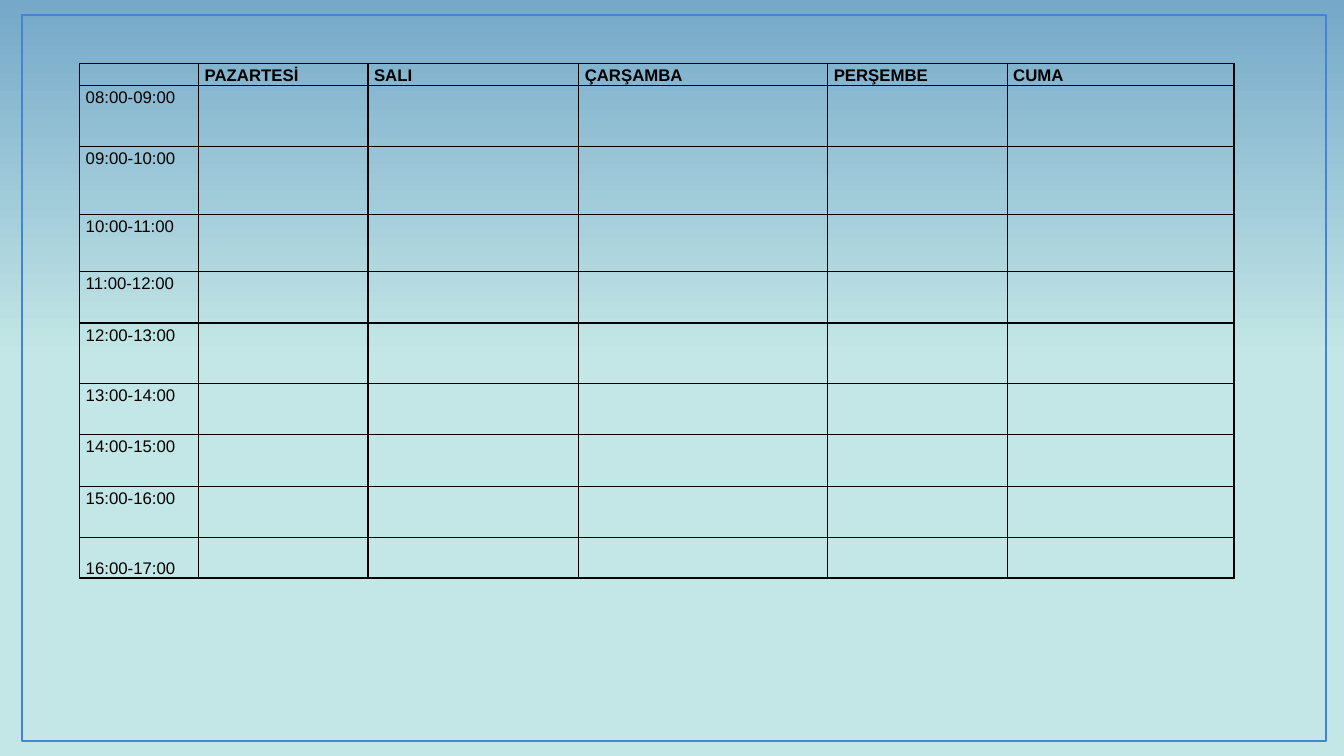
from dataclasses import dataclass

from lxml.etree import SubElement
from pptx import Presentation
from pptx.dml.color import RGBColor
from pptx.enum.shapes import MSO_SHAPE
from pptx.enum.text import MSO_ANCHOR
from pptx.oxml.ns import qn
from pptx.slide import Slide
from pptx.table import _Cell
from pptx.util import Inches, Pt

COLORS = {"pale": "C3E7E6", "sky": "75A8C9", "frame": "4584D3", "ink": "000000"}
DAYS = ["PAZARTESİ", "SALI", "ÇARŞAMBA", "PERŞEMBE", "CUMA"]
WIDTHS = [1.18, 1.68, 2.09, 2.47, 1.78, 2.25]
HEAD = 0.2


@dataclass
class Slot:
    start: int
    height: float

    @property
    def label(self) -> str:
        return f"{self.start:02}:00-{self.start + 1:02}:00"


HEIGHTS = [0.61, 0.67, 0.57, 0.51, 0.6, 0.51, 0.51, 0.51, 0.4]
SLOTS = [Slot(hour, height) for hour, height in enumerate(HEIGHTS, 8)]


def color(name: str) -> RGBColor:
    return RGBColor.from_string(COLORS[name])


def paint(slide: Slide) -> None:
    """Fill the background with a gradient that starts at the bottom."""
    fill = slide.background.fill
    fill.gradient()
    fill.gradient_angle = 90
    for stop, (place, name) in zip(fill.gradient_stops, [(0.53, "pale"), (1, "sky")]):
        stop.position = place
        stop.color.rgb = color(name)


def add_frame(slide: Slide) -> None:
    frame = slide.shapes.add_shape(
        MSO_SHAPE.RECTANGLE, Inches(0.22), Inches(0.15), Inches(12.93), Inches(7.2)
    )
    frame.shadow.inherit = False
    frame.fill.background()
    frame.line.color.rgb = color("frame")
    frame.line.width = Pt(1.5)


def add_edges(cell: _Cell) -> None:
    props = cell._tc.get_or_add_tcPr()
    for spot, side in enumerate(["lnL", "lnR", "lnT", "lnB"]):
        line = SubElement(props, qn(f"a:{side}"), w=str(Pt(1)))
        solid = SubElement(line, qn("a:solidFill"))
        SubElement(solid, qn("a:srgbClr"), val=COLORS["ink"])
        props.insert(spot, line)


def fill_cell(cell: _Cell, text: str, bold: bool) -> None:
    cell.margin_left = cell.margin_right = Inches(0.06)
    cell.margin_top = cell.margin_bottom = 0
    cell.fill.background()
    add_edges(cell)
    cell.text = text
    para = cell.text_frame.paragraphs[0]
    para.line_spacing = 1.15
    para.font.name = "Arial"
    para.font.size = Pt(12)
    para.font.bold = bold
    para.font.color.rgb = color("ink")
    if not text:
        SubElement(para._p, qn("a:endParaRPr"), sz="1200")


def add_plan(slide: Slide) -> None:
    rows = [["", *DAYS]] + [[slot.label] + [""] * len(DAYS) for slot in SLOTS]
    sizes = [HEAD, *HEIGHTS]
    table = slide.shapes.add_table(
        len(rows), len(WIDTHS), Inches(0.79), Inches(0.63),
        Inches(sum(WIDTHS)), Inches(sum(sizes)),
    ).table
    table.first_row = table.horz_banding = False
    for column, width in zip(table.columns, WIDTHS):
        column.width = Inches(width)
    for top, (texts, height) in enumerate(zip(rows, sizes)):
        table.rows[top].height = Inches(height)
        for left, text in enumerate(texts):
            fill_cell(table.cell(top, left), text, bold=top == 0)
    table.cell(len(SLOTS), 0).vertical_anchor = MSO_ANCHOR.BOTTOM


def main() -> None:
    deck = Presentation()
    deck.slide_width, deck.slide_height = Inches(13.33), Inches(7.5)
    slide = deck.slides.add_slide(deck.slide_layouts[6])
    paint(slide)
    add_frame(slide)
    add_plan(slide)
    deck.save("out.pptx")


if __name__ == "__main__":
    main()
